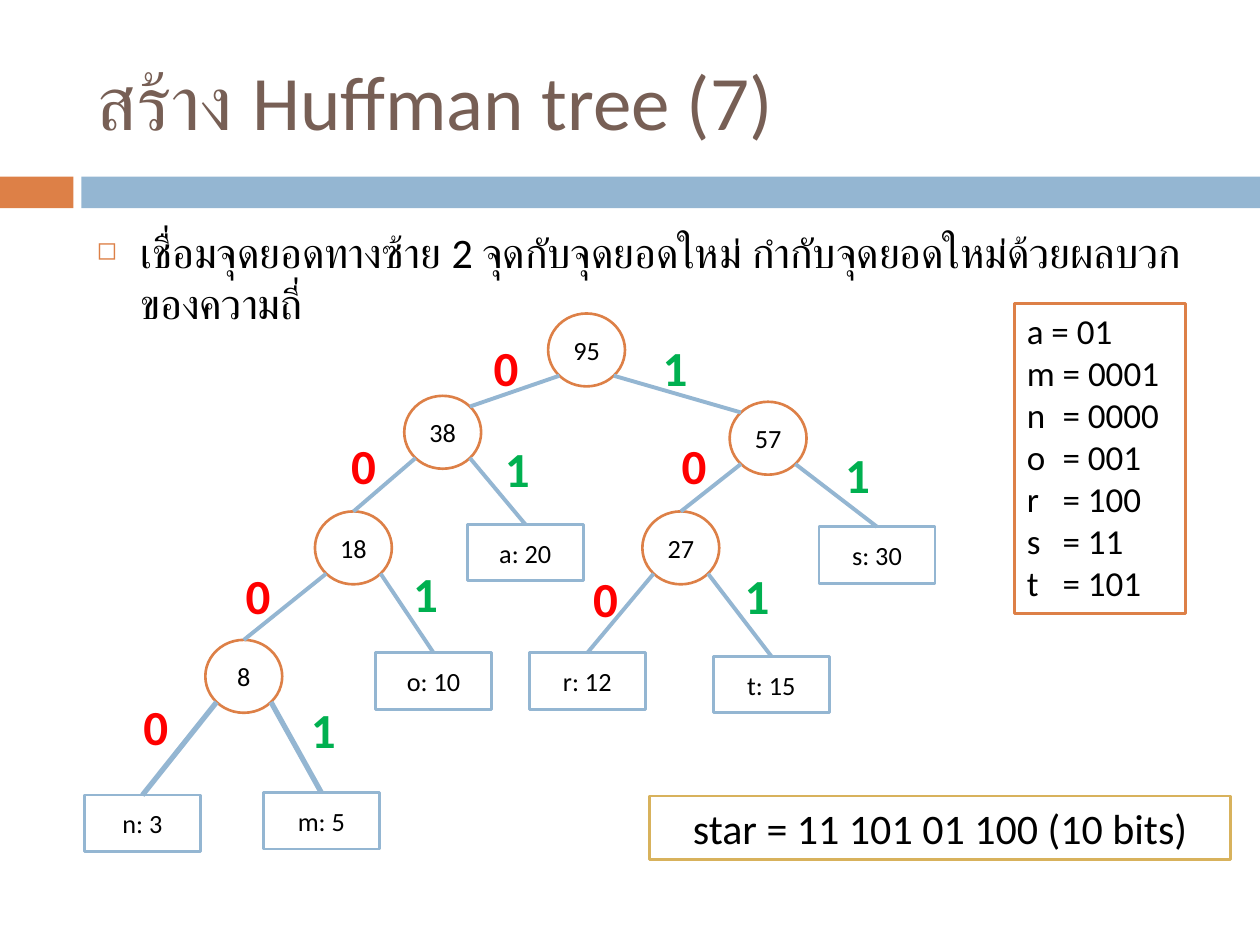
from lxml import etree
from pptx import Presentation
from pptx import util as u
from pptx.dml.color import RGBColor
from pptx.enum import shapes, text
from pptx.oxml.ns import qn

FONT = "Calibri"
BLACK, WHITE, BROWN = "000000", "FFFFFF", "775F55"
ORANGE, BLUE, GOLD = "DD8047", "94B6D2", "D8B25C"
BITS = {"0": "FF0000", "1": "00B050"}
NODE = (1.55, 1.47)
LEAF = (2.34, 1.14)
RECT, OVAL = shapes.MSO_SHAPE.RECTANGLE, shapes.MSO_SHAPE.OVAL
LEFT, MID = text.PP_ALIGN.LEFT, text.PP_ALIGN.CENTER

NODES = {
    "95": (11.05, 6.32), "38": (8.15, 7.98), "57": (14.71, 8.1),
    "18": (6.35, 10.31), "27": (12.95, 10.31), "8": (4.14, 12.9),
}
LEAVES = {
    "n: 3": (1.7, 16.03), "m: 5": (5.31, 15.98), "o: 10": (7.57, 13.16),
    "t: 15": (14.38, 13.23), "s: 30": (16.51, 10.62),
    "r: 12": (10.67, 13.16), "a: 20": (9.42, 10.57),
}
# parent, child, bit, place of the bit
EDGES = [
    ("95", "38", "0", (9.7, 6.68)), ("95", "57", "1", (13.11, 6.68)),
    ("38", "18", "0", (6.83, 8.66)), ("38", "a: 20", "1", (9.93, 8.71)),
    ("57", "27", "0", (13.49, 8.66)), ("57", "s: 30", "1", (16.79, 8.84)),
    ("18", "8", "0", (4.7, 11.28)), ("18", "o: 10", "1", (8.08, 11.23)),
    ("27", "r: 12", "0", (11.71, 11.33)), ("27", "t: 15", "1", (14.76, 11.28)),
    ("8", "n: 3", "0", (2.64, 13.92)), ("8", "m: 5", "1", (6.02, 13.97)),
]
CODES = ["a = 01", "m = 0001", "n\t= 0000", "o\t= 001",
         "r\t= 100", "s\t= 11", "t\t= 101"]


def rgb(code):
    return RGBColor.from_string(code)


def cm(*nums):
    return [u.Cm(n) for n in nums]


def write(para, words, size, color=BLACK, bold=None, align=LEFT):
    para.alignment = align
    run = para.add_run()
    run.text = words
    font = run.font
    font.name, font.size, font.bold = FONT, u.Pt(size), bold
    font.color.rgb = rgb(color)


def add_box(slide, kind, pos, size, fill, edge=None):
    box = slide.shapes.add_shape(kind, *cm(*pos, *size))
    box.shadow.inherit = False
    box.fill.solid()
    box.fill.fore_color.rgb = rgb(fill)
    if edge:
        box.line.color.rgb = rgb(edge)
        box.line.width = u.Pt(1.5)
    else:
        box.line.fill.background()
    return box


def add_node(slide, kind, pos, size, words, edge, points=15):
    box = add_box(slide, kind, pos, size, WHITE, edge)
    box.text_frame.vertical_anchor = text.MSO_ANCHOR.MIDDLE
    write(box.text_frame.paragraphs[0], words, points, align=MID)
    return box


def rim(oval, dx, dy):
    """Return the point on the oval's diagonal; dx and dy are -1 or 1."""
    part = 0.5 ** 0.5
    return (int(oval.left + oval.width * (1 + dx * part) / 2),
            int(oval.top + oval.height * (1 + dy * part) / 2))


def add_edge(slide, top, child, side, width, root):
    """Join a parent to its child; root edges meet the child's near corner."""
    end = rim(child, -side, -1) if root else (child.left, child.top)
    line = slide.shapes.add_connector(
        shapes.MSO_CONNECTOR.STRAIGHT, *rim(top, side, 1), *end)
    if not root:
        line.end_connect(child, 0)
    line.line.color.rgb = rgb(BLUE)
    line.line.width = u.Pt(width)
    etree.SubElement(line._element.spPr, qn("a:effectLst"))


def add_bit(slide, bit, pos):
    frame = slide.shapes.add_textbox(*cm(*pos, 1.07, 1.45)).text_frame
    frame.word_wrap = False
    write(frame.paragraphs[0], bit, 28, BITS[bit], True)


def add_title(slide, words):
    title = slide.shapes.title
    title.left, title.top, title.width, title.height = cm(1.7, 0.64, 22.66, 2.74)
    title.text_frame.vertical_anchor = text.MSO_ANCHOR.MIDDLE
    write(title.text_frame.paragraphs[0], words, 44, BROWN)


def add_point(slide, words):
    frame = slide.shapes.add_textbox(*cm(1.7, 4.45, 22.66, 12.5)).text_frame
    frame.word_wrap = True
    para = frame.paragraphs[0]
    para.space_before = u.Pt(7)
    write(para, words, 24)
    props = para._p.get_or_add_pPr()
    props.set("marL", str(u.Cm(0.89)))
    props.set("indent", str(u.Cm(-0.89)))
    color = etree.SubElement(props, qn("a:buClr"))
    etree.SubElement(color, qn("a:srgbClr"), val=ORANGE)
    etree.SubElement(props, qn("a:buSzPct"), val="60000")
    etree.SubElement(props, qn("a:buChar"), char="◻")


def add_codes(slide):
    box = add_box(slide, RECT, (20.45, 6.12), (3.45, 6.25), WHITE, ORANGE)
    frame = box.text_frame
    frame.word_wrap = False
    frame.vertical_anchor = text.MSO_ANCHOR.TOP
    for i, code in enumerate(CODES):
        para = frame.add_paragraph() if i else frame.paragraphs[0]
        write(para, code, 20)
        tabs = etree.SubElement(para._p.get_or_add_pPr(), qn("a:tabLst"))
        etree.SubElement(tabs, qn("a:tab"), pos=str(u.Cm(0.72)), algn="l")


def add_tree(slide):
    tree = {}
    for name, pos in LEAVES.items():
        tree[name] = add_node(slide, RECT, pos, LEAF, name, BLUE)
    for name, pos in NODES.items():
        tree[name] = add_node(slide, OVAL, pos, NODE, name, ORANGE)
    for top, child, bit, pos in EDGES:
        side = 1 if bit == "1" else -1
        width = 3 if top == "8" else 2.25
        add_edge(slide, tree[top], tree[child], side, width, top == "95")
        add_bit(slide, bit, pos)


def main():
    deck = Presentation()
    deck.slide_width, deck.slide_height = cm(25.4, 19.05)
    slide = deck.slides.add_slide(deck.slide_layouts[5])
    add_box(slide, RECT, (0, 3.56), (1.48, 0.64), ORANGE)
    add_box(slide, RECT, (1.64, 3.56), (23.76, 0.64), BLUE)
    add_title(slide, "สร้าง Huffman tree (7)")
    add_point(slide, "เชื่อมจุดยอดทางซ้าย 2 จุดกับจุดยอดใหม่ "
                     "กำกับจุดยอดใหม่ด้วยผลบวกของความถี่")
    add_tree(slide)
    add_codes(slide)
    add_node(slide, RECT, (13.1, 16.05), (11.71, 1.28),
             "star = 11 101 01 100 (10 bits)", GOLD, 24)
    deck.save("out.pptx")


if __name__ == "__main__":
    main()
